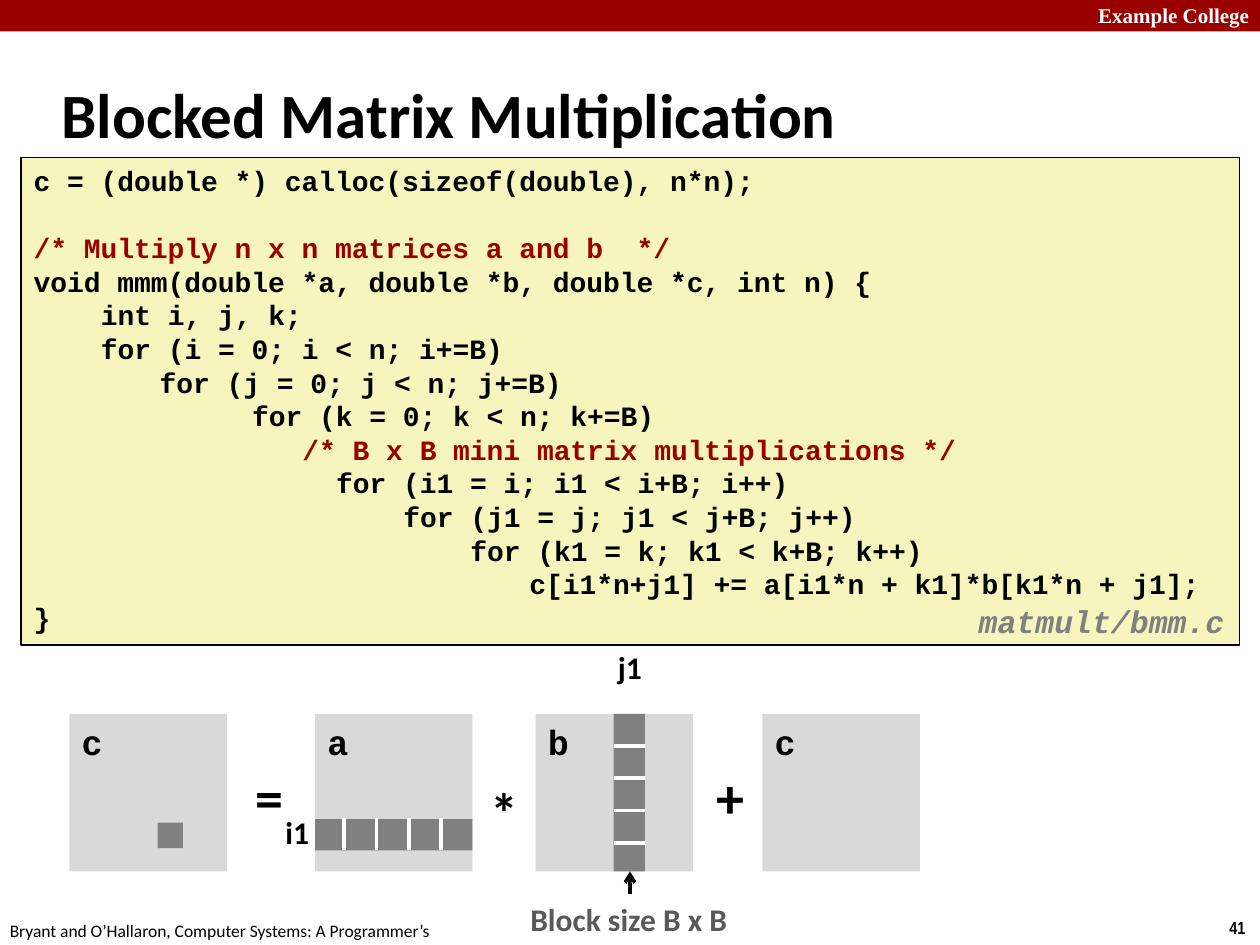
from dataclasses import dataclass

from lxml import etree
from pptx import Presentation
from pptx import util as u
from pptx.dml.color import RGBColor
from pptx.enum import shapes, text
from pptx.oxml import ns


@dataclass(frozen=True)
class Theme:
    band: str = "990000"
    paper: str = "FFFFFF"
    ink: str = "000000"
    code_fill: str = "F6F5BD"
    matrix: str = "D9D9D9"
    block: str = "808080"
    caption: str = "595959"
    sans: str = "Calibri"
    mono: str = "Courier New"
    serif: str = "Times New Roman"
    narrow: str = "Arial Narrow"
    title: int = 36
    operator: int = 32
    matrix_name: int = 20
    label: int = 18
    code: int = 16
    header: int = 12
    footer: int = 10


class SlideBuilder:
    def __init__(self, slide, theme):
        self.slide, self.theme = slide, theme

    def style(self, paragraph, size, face, color, bold=True):
        font = paragraph.font
        font.size, font.name, font.bold = u.Pt(size), face, bold
        font.color.rgb = RGBColor.from_string(color)

    def title(self, words, box):
        holder = self.slide.shapes.title
        holder.left, holder.top, holder.width, holder.height = map(u.Pt, box)
        frame = holder.text_frame
        frame.text = words
        frame.auto_size = text.MSO_AUTO_SIZE.NONE
        frame.vertical_anchor = text.MSO_ANCHOR.MIDDLE
        frame.paragraphs[0].alignment = text.PP_ALIGN.LEFT
        self.style(frame.paragraphs[0], self.theme.title, self.theme.sans, self.theme.ink)

    def rect(self, box, fill, outline=None):
        shape = self.slide.shapes.add_shape(shapes.MSO_SHAPE.RECTANGLE, *map(u.Pt, box))
        shape.shadow.inherit = False
        shape.fill.solid()
        shape.fill.fore_color.rgb = RGBColor.from_string(fill)
        if outline:
            shape.line.color.rgb = RGBColor.from_string(outline)
            shape.line.width = u.Pt(1)
        else:
            shape.line.fill.background()
        return shape

    def label(self, words, box, size, face=None, color=None, bold=True,
              align=text.PP_ALIGN.LEFT):
        frame = self.slide.shapes.add_textbox(*map(u.Pt, box)).text_frame
        frame.word_wrap = False
        frame.text = words
        paragraph = frame.paragraphs[0]
        paragraph.alignment = align
        self.style(paragraph, size, face or self.theme.sans, color or self.theme.ink, bold)
        return paragraph

    def matrix(self, name, left, top, side):
        frame = self.rect((left, top, side, side), self.theme.matrix).text_frame
        frame.vertical_anchor = text.MSO_ANCHOR.TOP
        frame.text = name
        frame.paragraphs[0].alignment = text.PP_ALIGN.LEFT
        self.style(frame.paragraphs[0], self.theme.matrix_name, self.theme.mono, self.theme.ink)

    def code(self, lines, box, pitch):
        frame = self.rect(box, self.theme.code_fill, self.theme.ink).text_frame
        frame.vertical_anchor = text.MSO_ANCHOR.TOP
        for number, (indent, words, blank_above) in enumerate(lines):
            paragraph = frame.add_paragraph() if number else frame.paragraphs[0]
            paragraph.text = words
            paragraph.alignment = text.PP_ALIGN.LEFT
            paragraph.line_spacing = u.Pt(pitch)
            paragraph.space_before = u.Pt(pitch if blank_above else 0)
            paragraph._p.get_or_add_pPr().set("marL", str(u.Pt(indent)))
            color = self.theme.band if words.startswith("/*") else self.theme.ink
            self.style(paragraph, self.theme.code, self.theme.mono, color)

    def line(self, x1, y1, x2, y2, color, arrow=False):
        rule = self.slide.shapes.add_connector(
            shapes.MSO_CONNECTOR.STRAIGHT, *map(u.Pt, (x1, y1, x2, y2)))
        rule.line.color.rgb = RGBColor.from_string(color)
        rule.line.width = u.Pt(2)
        if arrow:
            etree.SubElement(rule.line._get_or_add_ln(), ns.qn("a:tailEnd"), type="arrow")
        etree.SubElement(rule._element.spPr, ns.qn("a:effectLst"))


# Code lines: indent in points, words, blank line above
CHAR, TAB = 9.6, 72
CODE = [
    (0, "c = (double *) calloc(sizeof(double), n*n);", False),
    (0, "/* Multiply n x n matrices a and b  */", True),
    (0, "void mmm(double *a, double *b, double *c, int n) {", False),
    (4 * CHAR, "int i, j, k;", False),
    (4 * CHAR, "for (i = 0; i < n; i+=B)", False),
    (TAB, "for (j = 0; j < n; j+=B)", False),
    (13 * CHAR, "for (k = 0; k < n; k+=B)", False),
    (2 * TAB + CHAR, "/* B x B mini matrix multiplications */", False),
    (18 * CHAR, "for (i1 = i; i1 < i+B; i++)", False),
    (22 * CHAR, "for (j1 = j; j1 < j+B; j++)", False),
    (26 * CHAR, "for (k1 = k; k1 < k+B; k++)", False),
    (TAB + 22 * CHAR, "c[i1*n+j1] += a[i1*n + k1]*b[k1*n + j1];", False),
    (0, "}", False),
]


def main():
    theme = Theme()
    deck = Presentation()
    deck.slide_width, deck.slide_height = u.Pt(720), u.Pt(540)
    page = SlideBuilder(deck.slides.add_slide(deck.slide_layouts[5]), theme)

    # Header band and footer
    page.rect((0, 0, 720, 18), theme.band)
    page.label("Example College", (616, -2, 105, 21.6), theme.header, theme.serif,
               theme.paper, align=text.PP_ALIGN.RIGHT)
    page.label("41", (695.5, 520.5, 24.5, 19.5), theme.footer, theme.narrow)
    page.label("Bryant and O’Hallaron, Computer Systems: A Programmer’s Perspective,",
               (-1.5, 522, 300, 18), theme.footer, bold=False)

    # Title and code
    page.title("Blocked Matrix Multiplication", (28, 34.5, 597.6, 60))
    page.code(CODE, (12.2, 90, 696.2, 278.6), 19.2)
    file_name = page.label("matmult/bmm.c", (552.2, 342, 160.6, 28),
                           theme.label, theme.mono, theme.block)
    file_name.font.italic = True
    file_name.line_spacing = 0.94

    # Matrices and operators
    top, side, cell = 408, 90, 18
    a_left, b_left = 180, 306
    for name, left in (("c", 39.6), ("a", a_left), ("b", b_left), ("c", 435.6)):
        page.matrix(name, left, top, side)
    for sign, left, sign_top in (("=", 139, 432), ("*", 273, 440.6), ("+", 402.5, 432)):
        page.label(sign, (left, sign_top, 31, 46), theme.operator)

    # Highlighted block, row band and column band
    row_top, column_left = top + 60, b_left + 44.6
    page.rect((90, 470, 14.6, 14.6), theme.block)
    page.rect((a_left, row_top, side, cell), theme.block)
    page.rect((column_left, top, cell, side), theme.block)
    for step in range(4):
        offset = 16.6 + 18.5 * step + 1.4 * 0
        x, y = a_left + offset, top + offset + 1.6
        page.line(x, row_top - 0.5, x, row_top + cell - 0.5, theme.paper)
        page.line(column_left, y, column_left + cell, y, theme.paper)

    # Index labels and block size
    page.label("i1", (156, 461, 28, 29), theme.label)
    page.label("j1", (346, 367, 28, 29), theme.label)
    page.rect((296, 511, 128, 29), theme.paper)
    page.label("Block size B x B", (296, 511, 128, 29), theme.label, color=theme.caption)
    page.line(360, 511, 360, 498, theme.ink, arrow=True)

    deck.save("out.pptx")


if __name__ == "__main__":
    main()
